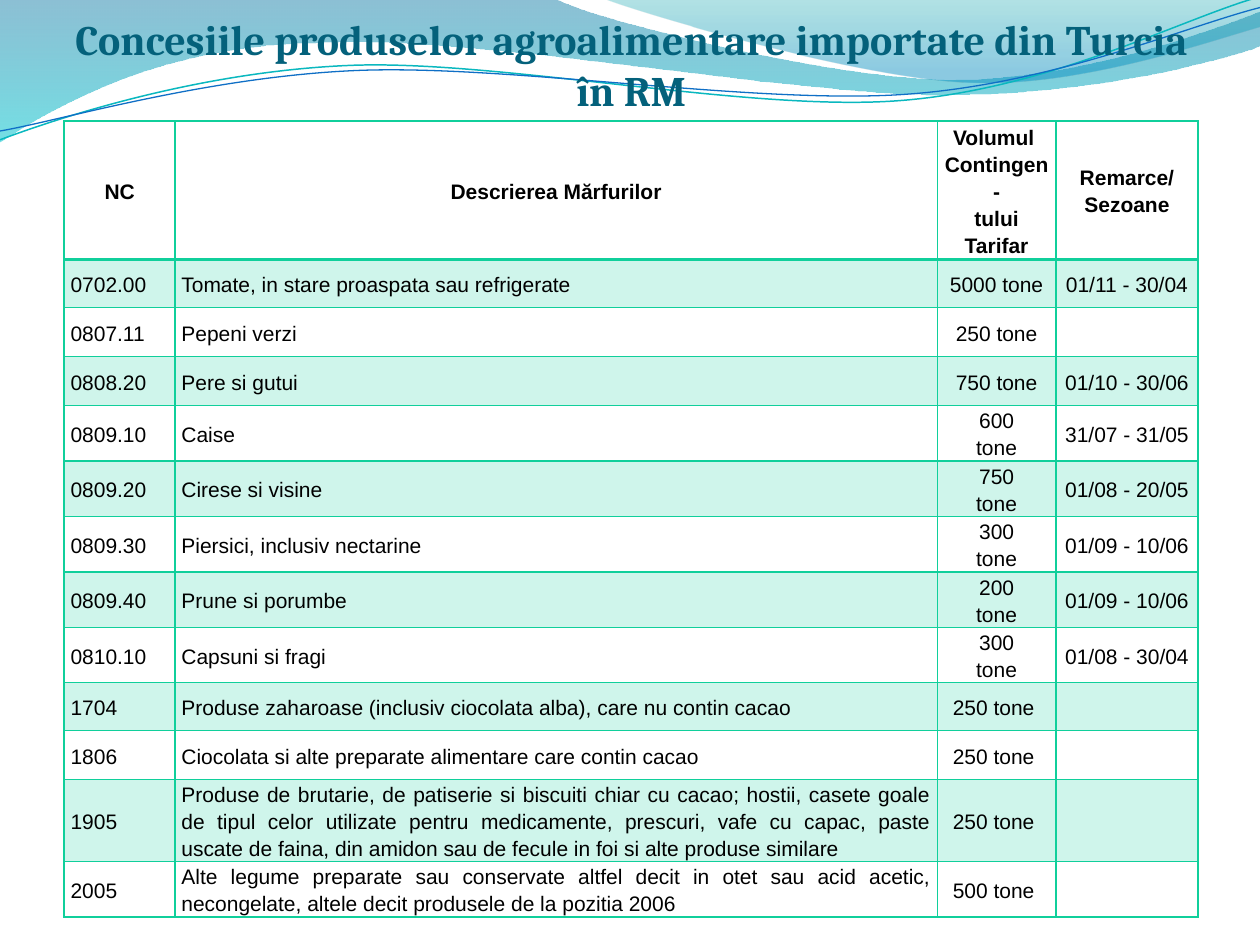
from lxml import etree
from pptx import Presentation
from pptx import util as u
from pptx.dml.color import RGBColor
from pptx.enum import text
from pptx.oxml.ns import qn

HUES = {"ink": "000000", "title": "04617B", "green": "10CF9B",
        "blue": "0074A1", "aqua": "00C6CF", "teal": "00A1A9",
        "sea": "008BBF", "cyan": "0AB8BF", "navy": "0F6FC6"}
LEFT, MID, FULL = text.PP_ALIGN.LEFT, text.PP_ALIGN.CENTER, text.PP_ALIGN.JUSTIFY

HEAD = ("NC", "Descrierea Mărfurilor", "Volumul \nContingen-\ntului\nTarifar",
        "Remarce/\nSezoane")
GOODS = [
    ("0702.00", "Tomate, in stare proaspata sau refrigerate", "5000 tone", "01/11 - 30/04"),
    ("0807.11", "Pepeni verzi", "250 tone", ""),
    ("0808.20", "Pere si gutui", "750 tone", "01/10 - 30/06"),
    ("0809.10", "Caise", "600\ntone", "31/07 - 31/05"),
    ("0809.20", "Cirese si visine", "750\ntone", "01/08 - 20/05"),
    ("0809.30", "Piersici, inclusiv nectarine", "300\ntone", "01/09 - 10/06"),
    ("0809.40", "Prune si porumbe", "200\ntone", "01/09 - 10/06"),
    ("0810.10", "Capsuni si fragi", "300\ntone", "01/08 - 30/04"),
    ("1704", "Produse zaharoase (inclusiv ciocolata alba), care nu contin cacao",
     "250 tone ", ""),
    ("1806", "Ciocolata si alte preparate alimentare care contin cacao", "250 tone ", ""),
    ("1905", "Produse de brutarie, de patiserie si biscuiti chiar cu cacao; hostii, "
     "casete goale de tipul celor utilizate pentru medicamente, prescuri, vafe cu capac, "
     "paste uscate de faina, din amidon sau de fecule in foi si alte produse similare",
     "250 tone ", ""),
    ("2005", "Alte legume preparate sau conservate altfel decit in otet sau acid acetic, "
     "necongelate, altele decit produsele de la pozitia 2006", "500 tone ", ""),
]
COLS = [0.88, 6.05, 0.94, 1.13]
ROWS = [1.1, 0.38, 0.39, 0.39] + [0.44] * 5 + [0.38, 0.39, 0.65, 0.44]

LARGE = [(0, -0.01), (4.4, -0.01),
         (4.76, 0.17, 6.64, 0.63, 7.58, 0.63), (8.53, 0.63, 9.58, 0.26, 10, 0.09),
         (10.01, 0.36), (9.83, 0.44, 8.7, 0.76, 7.46, 0.75),
         (6.22, 0.75, 3.82, 0.28, 2.57, 0.34), (1.29, 0.35, 0.46, 0.83, -0.01, 1.13)]
SMALL = [(4.79, -0.01), (5.09, 0.11, 6.82, 0.62, 7.69, 0.65),
         (8.56, 0.69, 9.61, 0.32, 10, 0.21), (10, 0)]
UPPER = [(0, 1.11), (0.48, 0.93, 1.58, 0.57, 2.77, 0.52),
         (3.95, 0.47, 5.93, 0.89, 7.13, 0.8), (8.33, 0.71, 9.38, 0.15, 9.98, -0.02)]
LOWER = [(0, 1.04), (0.47, 0.96, 1.64, 0.61, 2.83, 0.56),
         (4.03, 0.51, 5.97, 0.83, 7.17, 0.75), (8.36, 0.67, 9.41, 0.21, 10, 0.06)]


def rgb(name):
    return RGBColor.from_string(HUES[name])


def fade(node, levels):
    for hue, level in zip(node.iter(qn("a:srgbClr")), levels):
        etree.SubElement(hue, qn("a:alpha"), val=str(level * 1000))


def bend(shape, path):
    lines = iter(list(shape.element.iter(qn("a:lnTo"))))
    for part in path[1:]:
        group = [next(lines) for _ in range(len(part) // 2)]
        if len(group) == 3:
            cubic = etree.Element(qn("a:cubicBezTo"))
            group[0].addprevious(cubic)
            for line in group:
                cubic.append(line[0])
                line.getparent().remove(line)


class Deck:
    def __init__(self):
        self.prs = Presentation()
        self.prs.slide_width, self.prs.slide_height = u.Inches(10), u.Inches(7.5)
        self.slide = self.prs.slides.add_slide(self.prs.slide_layouts[5])
        self.font, self.size, self.edge = "Arial", 12, "green"

    def form(self, path, close):
        flat = [u.Inches(v) for part in path for v in part]
        spots = list(zip(flat[::2], flat[1::2]))
        pen = self.slide.shapes.build_freeform(*spots[0])
        pen.add_line_segments(spots[1:], close=close)
        shape = pen.convert_to_shape()
        shape.shadow.inherit = False
        bend(shape, path)
        return shape

    def wave(self, path, stops):
        shape = self.form(path, True)
        shape.line.fill.background()
        shape.fill.gradient()
        shape.fill.gradient_angle = 270
        for stop, (place, name, _) in zip(shape.fill.gradient_stops, stops):
            stop.position, stop.color.rgb = place, rgb(name)
        fade(shape.element.spPr, [stop[2] for stop in stops])

    def curve(self, path, name, width):
        shape = self.form(path, False)
        shape.fill.background()
        shape.line.color.rgb = rgb(name)
        shape.line.width = u.Pt(width)

    def style(self, para, align, name, size, hue, bold):
        para.alignment = align
        for font in [para.font] + [run.font for run in para.runs]:
            font.name, font.size, font.bold = name, u.Pt(size), bold
            font.color.rgb = rgb(hue)

    def title(self, words, box):
        shape = self.slide.shapes.title
        shape.element.getparent().append(shape.element)
        shape.left, shape.top, shape.width, shape.height = map(u.Inches, box)
        frame = shape.text_frame
        frame.text = words
        frame.word_wrap = True
        frame.auto_size = text.MSO_AUTO_SIZE.NONE
        frame.vertical_anchor = text.MSO_ANCHOR.BOTTOM
        frame.margin_left = frame.margin_right = frame.margin_bottom = 0
        frame.margin_top = u.Inches(0.05)
        self.style(frame.paragraphs[0], MID, "Cambria", 24, "title", True)

    def border(self, cell, widths):
        props = cell._tc.get_or_add_tcPr()
        for i, (side, width) in enumerate(zip("LRTB", widths)):
            line = etree.Element(qn("a:ln" + side), w=str(u.Pt(width)))
            fill = etree.SubElement(line, qn("a:solidFill"))
            etree.SubElement(fill, qn("a:srgbClr"), val=HUES[self.edge])
            props.insert(i, line)

    def cell(self, cell, words, align, bold, tint, widths):
        cell.margin_left = cell.margin_right = u.Inches(0.05)
        cell.margin_top = cell.margin_bottom = 0
        cell.vertical_anchor = text.MSO_ANCHOR.MIDDLE
        cell.text_frame.text = words
        for para in cell.text_frame.paragraphs:
            para.line_spacing = 1.15
            self.style(para, align, self.font, self.size, "ink", bold)
        if tint:
            cell.fill.solid()
            cell.fill.fore_color.rgb = rgb(self.edge)
            fade(cell._tc.get_or_add_tcPr(), [20])
        else:
            cell.fill.background()
        self.border(cell, widths)

    def table(self, data, left, top):
        grid = self.slide.shapes.add_table(
            len(ROWS), len(COLS), u.Inches(left), u.Inches(top),
            u.Inches(sum(COLS)), u.Inches(sum(ROWS))).table
        grid.first_row = grid.horz_banding = False
        for col, width in zip(grid.columns, COLS):
            col.width = u.Inches(width)
        for r, (row, high) in enumerate(zip(data, ROWS)):
            grid.rows[r].height = u.Inches(high)
            aligns = (LEFT, FULL, MID, MID) if r else (MID,) * 4
            widths = (1, 1, 2 if r == 1 else 1, 1 if r else 2)
            for c, (words, align) in enumerate(zip(row, aligns)):
                self.cell(grid.cell(r, c), words, align, r == 0, r % 2 == 1, widths)


def main():
    deck = Deck()
    deck.wave(LARGE, [(0, "blue", 45), (1, "aqua", 55)])
    deck.wave(SMALL, [(0, "teal", 30), (0.8, "sea", 45)])
    deck.curve(UPPER, "cyan", 0.85)
    deck.curve(LOWER, "navy", 0.75)
    deck.title("Concesiile produselor agroalimentare importate din Turcia în RM",
               (0.51, 0.21, 9, 0.7))
    deck.table([HEAD] + GOODS, 0.51, 0.96)
    deck.prs.save("out.pptx")


if __name__ == "__main__":
    main()
